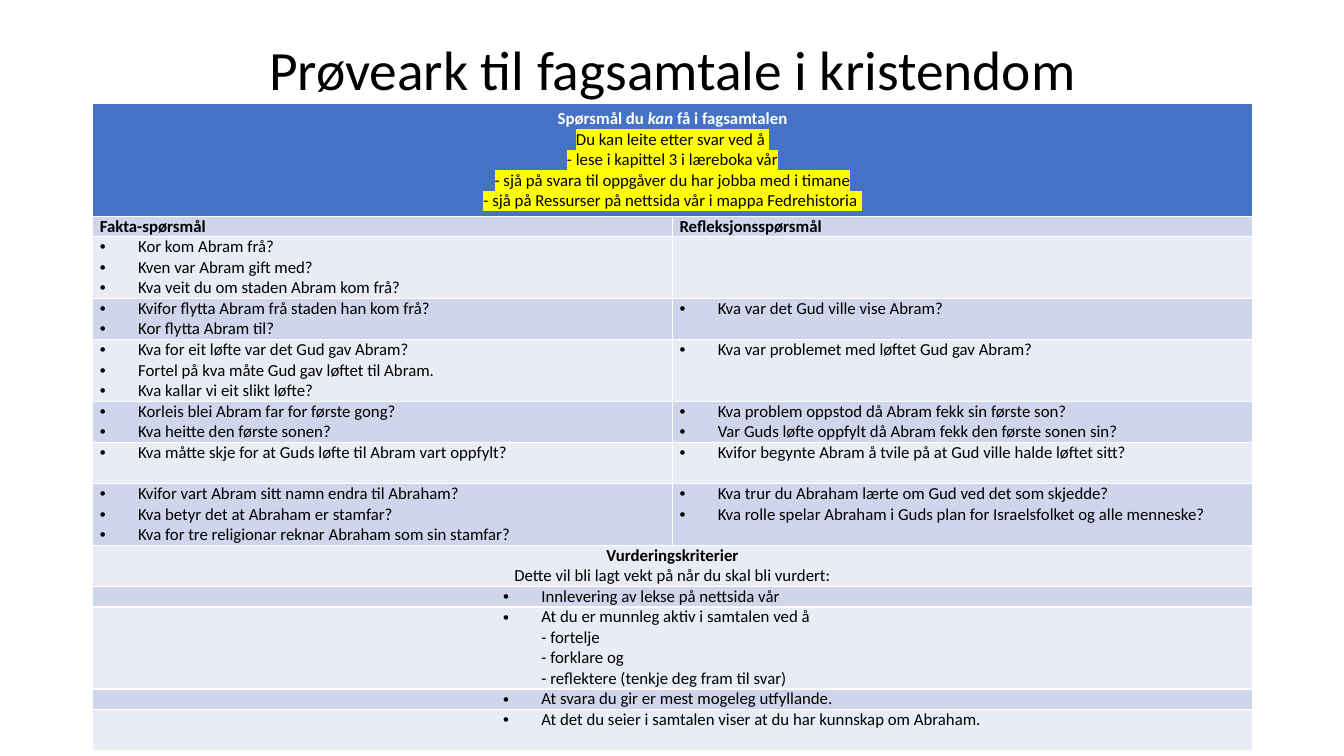
from dataclasses import dataclass

from lxml import etree
from pptx import Presentation
from pptx import util as u
from pptx.dml import color
from pptx.enum import text
from pptx.oxml import ns

BLUE, BAND_DARK, BAND_LIGHT = "4472C4", "CFD5EA", "E9EBF5"
WHITE, BLACK, YELLOW = "FFFFFF", "000000", "FFFF00"
LEFT, WIDTH = 0.92, 11.5
HANGING = 0.38
CRITERIA_LEFT = 4.38


@dataclass
class Run:
    text: str
    bold: bool = False
    italic: bool = False
    color: str = BLACK
    highlight: str = ""
    size: float = 12


@dataclass
class Para:
    runs: list[Run]
    centred: bool = False
    bullet_left: float = 0
    level: int = 0


@dataclass
class Row:
    cells: list[list[Para]]  # a single cell spans both columns
    height: float = 0.41


def rgb(value: str) -> color.RGBColor:
    return color.RGBColor.from_string(value)


def set_all(target, values: dict) -> None:
    for name, value in values.items():
        setattr(target, name, value)


def add_run(p, run: Run) -> None:
    """Add a run, with line breaks where its text has them."""
    for i, line in enumerate(run.text.split("\n")):
        if i:
            p.add_line_break()
        r = p.add_run()
        r.text = line
        set_all(r.font, {"name": "Calibri", "size": u.Pt(run.size),
                         "bold": run.bold, "italic": run.italic})
        r.font.color.rgb = rgb(run.color)
        if run.highlight:
            mark = etree.Element(ns.qn("a:highlight"))
            etree.SubElement(mark, ns.qn("a:srgbClr"), val=run.highlight)
            r.font._element.find(ns.qn("a:solidFill")).addnext(mark)


def fill_text(tf, paras: list[Para]) -> None:
    for i, para in enumerate(paras):
        p = tf.add_paragraph() if i else tf.paragraphs[0]
        p.level = para.level
        p.alignment = text.PP_ALIGN.CENTER if para.centred else text.PP_ALIGN.LEFT
        if para.bullet_left:
            props = p._p.get_or_add_pPr()
            props.set("marL", str(u.Inches(para.bullet_left)))
            props.set("indent", str(u.Inches(-HANGING)))
            etree.SubElement(props, ns.qn("a:buFont"), typeface="Arial")
            etree.SubElement(props, ns.qn("a:buChar"), char="•")
        for run in para.runs:
            add_run(p, run)


def questions(*lines: str) -> list[Para]:
    return [Para([Run(line)], bullet_left=HANGING) for line in lines]


def criterion(line: str, height: float = 0.41) -> Row:
    return Row([[Para([Run(line)], bullet_left=CRITERIA_LEFT, level=8)]], height)


def heading(line: str) -> list[Para]:
    return [Para([Run(line, bold=True)])]


def hint(line: str) -> Para:
    return Para([Run(line, highlight=YELLOW)], centred=True)


ROWS = [
    Row([[
        Para([Run("Spørsmål du", bold=True, color=WHITE),
              Run(" kan ", bold=True, italic=True, color=WHITE),
              Run("få i fagsamtalen", bold=True, color=WHITE)], centred=True),
        hint("Du kan leite etter svar ved å \n- lese i kapittel 3 i læreboka vår"),
        hint("- sjå på svara til oppgåver du har jobba med i timane"),
        hint("- sjå på Ressurser på nettsida vår i mappa Fedrehistoria "),
    ]]),
    Row([heading("Fakta-spørsmål"), heading("Refleksjonsspørsmål")], 0.2),
    Row([questions("Kor kom Abram frå?", "Kven var Abram gift med?",
                   "Kva veit du om staden Abram kom frå?"), []]),
    Row([questions("Kvifor flytta Abram frå staden han kom frå?",
                   "Kor flytta Abram til?"),
         questions("Kva var det Gud ville vise Abram?")]),
    Row([questions("Kva for eit løfte var det Gud gav Abram?",
                   "Fortel på kva måte Gud gav løftet til Abram.",
                   "Kva kallar vi eit slikt løfte?"),
         questions("Kva var problemet med løftet Gud gav Abram?")]),
    Row([questions("Korleis blei Abram far for første gong?",
                   "Kva heitte den første sonen?"),
         questions("Kva problem oppstod då Abram fekk sin første son?",
                   "Var Guds løfte oppfylt då Abram fekk den første sonen sin?")]),
    Row([questions("Kva måtte skje for at Guds løfte til Abram vart oppfylt?"),
         questions("Kvifor begynte Abram å tvile på at Gud ville halde løftet sitt?")]),
    Row([questions("Kvifor vart Abram sitt namn endra til Abraham?",
                   "Kva betyr det at Abraham er stamfar?",
                   "Kva for tre religionar reknar Abraham som sin stamfar?"),
         questions("Kva trur du Abraham lærte om Gud ved det som skjedde?",
                   "Kva rolle spelar Abraham i Guds plan for Israelsfolket og alle menneske?")]),
    Row([[Para([Run("Vurderingskriterier", bold=True)], centred=True),
          Para([Run("Dette vil bli lagt vekt på når du skal bli vurdert:")], centred=True)]]),
    criterion("Innlevering av lekse på nettsida vår", 0.17),
    criterion("At du er munnleg aktiv i samtalen ved å \n- fortelje\n- forklare og \n"
              "- reflektere (tenkje deg fram til svar)"),
    criterion("At svara du gir er mest mogeleg utfyllande.", 0.13),
    criterion("At det du seier i samtalen viser at du har kunnskap om Abraham."),
]


def add_title(s) -> None:
    sp = s.shapes.title
    set_all(sp, {"left": u.Inches(LEFT), "top": u.Inches(0.4),
                 "width": u.Inches(WIDTH), "height": u.Inches(0.63)})
    tf = sp.text_frame
    set_all(tf, {"word_wrap": True, "auto_size": text.MSO_AUTO_SIZE.NONE,
                 "vertical_anchor": text.MSO_ANCHOR.MIDDLE})
    fill_text(tf, [Para([Run("Prøveark til fagsamtale i kristendom", size=39.6)],
                        centred=True)])
    tf.paragraphs[0].line_spacing = 0.9


def add_questions_table(s) -> None:
    frame = s.shapes.add_table(len(ROWS), 2, u.Inches(LEFT), u.Inches(1.03),
                               u.Inches(WIDTH), u.Inches(6.33))
    table = frame.table
    for i, row in enumerate(ROWS):
        table.rows[i].height = u.Inches(row.height)
        if len(row.cells) == 1:
            table.cell(i, 0).merge(table.cell(i, 1))
        band = BLUE if i == 0 else BAND_DARK if i % 2 else BAND_LIGHT
        for j in range(2):
            cell = table.cell(i, j)
            cell.fill.solid()
            cell.fill.fore_color.rgb = rgb(band)
            if i:
                set_all(cell, {"margin_left": u.Inches(0.07), "margin_right": u.Inches(0.07),
                               "margin_top": 0, "margin_bottom": 0})
        for j, paras in enumerate(row.cells):
            fill_text(table.cell(i, j).text_frame, paras)
    frame.height = u.Inches(6.33)


def main() -> None:
    prs = Presentation()
    set_all(prs, {"slide_width": u.Inches(13.33), "slide_height": u.Inches(7.5)})
    s = prs.slides.add_slide(prs.slide_layouts[5])
    add_title(s)
    add_questions_table(s)
    prs.save("out.pptx")


if __name__ == "__main__":
    main()
